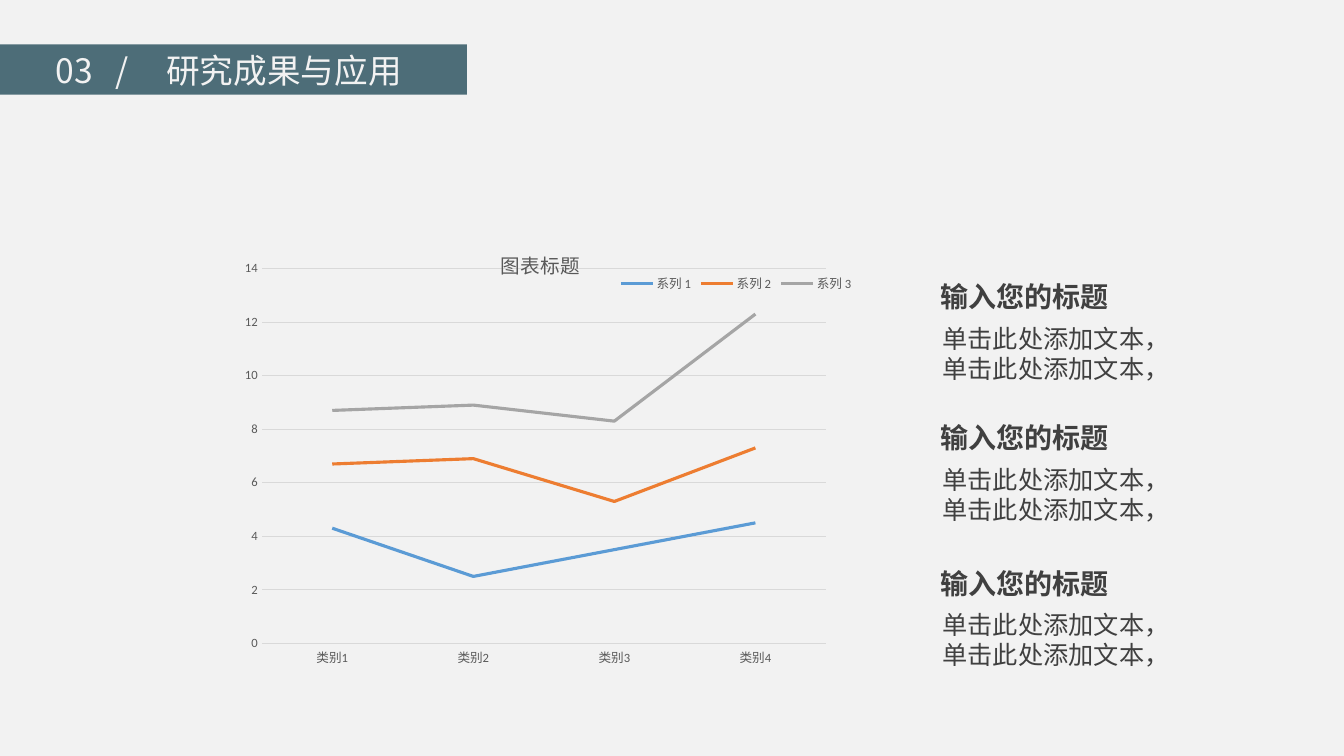
from lxml import etree
from pptx import Presentation
from pptx.chart.data import CategoryChartData
from pptx.dml.color import RGBColor
from pptx.enum.chart import XL_CHART_TYPE, XL_LEGEND_POSITION, XL_TICK_MARK
from pptx.enum.text import MSO_ANCHOR, MSO_AUTO_SIZE, PP_ALIGN
from pptx.oxml import parse_xml
from pptx.oxml.ns import nsdecls, qn
from pptx.util import Inches, Pt

NO_TICK = XL_TICK_MARK.NONE
CJK, LATIN = "Noto Sans CJK SC", "Calibri"
PAPER, TEAL, INK, GREY, RULE = "F2F2F2", "4D6D78", "404040", "595959", "D9D9D9"
TITLE_ONLY = 5


def write(frame, text, size, color, bold=False, leading=None):
    frame.word_wrap = True
    frame.auto_size = MSO_AUTO_SIZE.NONE
    para = frame.paragraphs[0]
    para.alignment = PP_ALIGN.LEFT
    if leading:
        para.line_spacing = Pt(leading)
    span = para.add_run()
    span.text = text
    style(span.font, size, color, CJK, bold)
    return para


def style(font, size, color, name, bold=False):
    """Set the font for Latin and for East Asian characters alike."""
    font.size, font.bold, font.name = Pt(size), bold, name
    font.color.rgb = RGBColor.from_string(color)
    if name == CJK:
        latin = font._element.find(qn("a:latin"))
        latin.addnext(parse_xml(f'<a:ea {nsdecls("a")} typeface="{CJK}"/>'))


deck = Presentation()
deck.slide_width, deck.slide_height = Inches(13.33), Inches(7.5)
page = deck.slides.add_slide(deck.slide_layouts[TITLE_ONLY])
page.background.fill.solid()
page.background.fill.fore_color.rgb = RGBColor.from_string(PAPER)

# Title bar, with tab stops for the slash and the heading
bar = page.shapes.title
bar.left, bar.top = Inches(-0.07), Inches(0.44)
bar.width, bar.height = Inches(4.7), Inches(0.5)
bar.fill.solid()
bar.fill.fore_color.rgb = RGBColor.from_string(TEAL)
frame = bar.text_frame
frame.vertical_anchor = MSO_ANCHOR.MIDDLE
frame.margin_left = Inches(0.62)
para = write(frame, "03\t/\t研究成果与应用", 24, PAPER)
tabs = etree.SubElement(para._p.get_or_add_pPr(), qn("a:tabLst"))
for stop in (0.6, 1.1):
    etree.SubElement(tabs, qn("a:tab"), pos=str(Inches(stop)), algn="l")

# Line chart
data = CategoryChartData()
data.categories = ["类别1", "类别2", "类别3", "类别4"]
series_rows = [
    ("系列 1", (4.3, 2.5, 3.5, 4.5), "5B9BD5"),
    ("系列 2", (2.4, 4.4, 1.8, 2.8), "ED7D31"),
    ("系列 3", (2, 2, 3, 5), "A5A5A5"),
]
for name, values, color in series_rows:
    data.add_series(name, values)
chart = page.shapes.add_chart(XL_CHART_TYPE.LINE_STACKED, Inches(2.35), Inches(2.23),
                              Inches(6.15), Inches(4.83), data).chart
style(chart.font, 10, "000000", LATIN)
plot = chart.plots[0]
plot.vary_by_categories = False
for series, (name, values, color) in zip(plot.series, series_rows):
    series.smooth = False
    series.format.line.width = Pt(2.25)
    series.format.line.color.rgb = RGBColor.from_string(color)

chart.has_title = True
span = chart.chart_title.text_frame.paragraphs[0].add_run()
span.text = "图表标题"
style(span.font, 14, GREY, CJK)

chart.has_legend = True
legend = chart.legend
legend.position = XL_LEGEND_POSITION.BOTTOM
legend.include_in_layout = False
style(legend.font, 9, GREY, LATIN)

category_axis, value_axis = chart.category_axis, chart.value_axis
for axis in (category_axis, value_axis):
    axis.major_tick_mark = axis.minor_tick_mark = NO_TICK
    style(axis.tick_labels.font, 9, GREY, LATIN)
value_axis.minimum_scale, value_axis.maximum_scale, value_axis.major_unit = 0, 14, 2
value_axis.format.line.fill.background()
for line in (category_axis.format.line, value_axis.major_gridlines.format.line):
    line.width = Pt(0.75)
    line.color.rgb = RGBColor.from_string(RULE)

# Places of the chart parts, as shares of the chart's size
area = chart._chartSpace.chart.plotArea
placements = [
    (chart.chart_title._element, "c:tx", {"x": 0.42, "y": 0.04}),
    (legend._element, "c:legendPos", {"x": 0.61, "y": 0.09, "w": 0.39, "h": 0.06}),
    (area, None, {"layoutTarget": "inner", "x": 0.04, "y": 0.09, "w": 0.91, "h": 0.77}),
]
for part, before, shares in placements:
    for old in part.findall(qn("c:layout")):
        part.remove(old)
    layout = parse_xml(f'<c:layout {nsdecls("c")}><c:manualLayout/></c:layout>')
    modes = {"xMode": "edge", "yMode": "edge"}
    target = {key: shares[key] for key in shares if key == "layoutTarget"}
    for key, value in {**target, **modes, **shares}.items():
        etree.SubElement(layout[0], qn(f"c:{key}"), val=str(value))
    if before:
        part.find(qn(before)).addnext(layout)
    else:
        part.insert(0, layout)

# Three headed notes
for top in (2.74, 4.14, 5.58):
    heading = page.shapes.add_textbox(Inches(9.23), Inches(top), Inches(2), Inches(0.42))
    write(heading.text_frame, "输入您的标题", 20, INK, bold=True, leading=23)
    note = page.shapes.add_textbox(Inches(9.25), Inches(top + 0.42), Inches(2.59), Inches(0.71))
    write(note.text_frame, "单击此处添加文本，单击此处添加文本，", 18, INK, leading=21.5)

deck.save("out.pptx")
